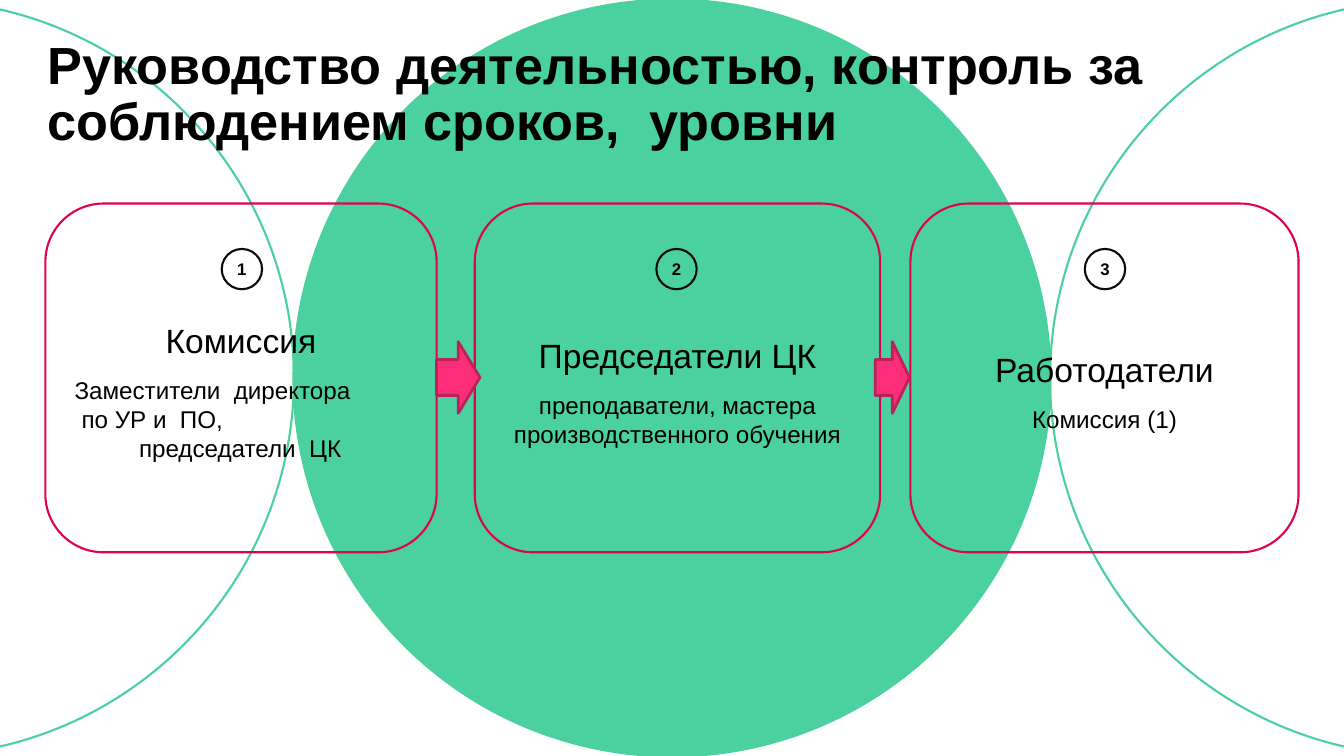
"""Build a slide of three linked levels of control over deadlines."""
from pptx import Presentation
from pptx.dml.color import RGBColor
from pptx.enum.shapes import MSO_SHAPE as KIND
from pptx.enum.text import MSO_ANCHOR, PP_ALIGN
from pptx.util import Inches, Pt

TITLE = "Руководство деятельностью, контроль за соблюдением сроков,  уровни"
# left, width, badge left, heading, body lines, line indents (None = centred)
CARDS = [
    (3.38, 29.11, 16.5, "Комиссия",
     [("Заместители  директора", 0.9), ("по УР и  ПО,", 1.43), ("председатели  ЦК", 5.7)]),
    (35.33, 30.16, 48.84, "Председатели ЦК",
     [("преподаватели, мастера производственного обучения", None)]),
    (67.74, 28.88, 80.72, "Работодатели", [("Комиссия (1)", None)]),
]
ARROWS = [(32.48, 3.23), (65.12, 2.55)]
HUES = {"green": "4BD0A0", "red": "DE0252", "ink": "0B0B0B",
        "pink": "FD2E79", "wine": "BB225A", "text": "000000"}
WIDE, HIGH = Inches(13.33), Inches(7.5)


def hue(name):
    return RGBColor.from_string(HUES[name])


def across(share):
    return round(WIDE * share / 100)


def down(share):
    return round(HIGH * share / 100)


def area(left, top, width, height):
    return across(left), down(top), across(width), down(height)


def draw(slide, kind, box, line, weight=1.5, fill=None):
    shape = slide.shapes.add_shape(kind, *box)
    shape.shadow.inherit = False
    shape.line.color.rgb = hue(line)
    shape.line.width = Pt(weight)
    if fill:
        shape.fill.solid()
        shape.fill.fore_color.rgb = hue(fill)
    else:
        shape.fill.background()
    return shape


def frame(shape, top=0, anchor=MSO_ANCHOR.MIDDLE):
    text = shape.text_frame
    text.word_wrap = True
    text.vertical_anchor = anchor
    text.margin_left = text.margin_right = text.margin_bottom = 0
    text.margin_top = Inches(top)
    return text


def write(para, words, size, bold=False, align=PP_ALIGN.CENTER):
    para.text = words
    para.alignment = align
    font = para.font
    font.name, font.size, font.bold = "Arial", Pt(size), bold
    font.color.rgb = hue("text")


def card(slide, number, left, width, spot, head, lines):
    panel = draw(slide, KIND.ROUNDED_RECTANGLE, area(left, 26.93, width, 46.13), "red")
    panel.adjustments[0] = 0.167
    text = frame(panel, 0.27)
    write(text.paragraphs[0], head, 24)
    for words, indent in lines:
        para = text.add_paragraph()
        write(para, words, 17.3)
        if indent is not None:
            para.alignment = PP_ALIGN.LEFT
            para._p.get_or_add_pPr().set("marL", str(across(indent)))
    text.paragraphs[1].space_before = Pt(10.7)
    text.paragraphs[-1].space_after = Pt(10.7)
    badge = draw(slide, KIND.OVAL, area(spot, 32.93, 3, 5.33), "ink")
    write(frame(badge).paragraphs[0], str(number), 12, True)


def main():
    deck = Presentation()
    deck.slide_width, deck.slide_height = WIDE, HIGH
    slide = deck.slides.add_slide(deck.slide_layouts[6])
    for step, weight, fill in [(1, 1.5, None), (-1, 1.5, None), (0, 2, "green")]:
        left = (WIDE - HIGH) // 2 + step * HIGH
        draw(slide, KIND.OVAL, (left, 0, HIGH, HIGH), "green", weight, fill)
    title = frame(slide.shapes.add_textbox(*area(3.53, 5.2, 92.95, 7.47)),
                  anchor=MSO_ANCHOR.TOP).paragraphs[0]
    write(title, TITLE, 37.3, True, PP_ALIGN.LEFT)
    title.line_spacing = 0.9
    for number, data in enumerate(CARDS, 1):
        card(slide, number, *data)
    for left, width in ARROWS:
        draw(slide, KIND.RIGHT_ARROW, area(left, 45.2, width, 9.47), "wine", 2, "pink")
    deck.save("out.pptx")


if __name__ == "__main__":
    main()
